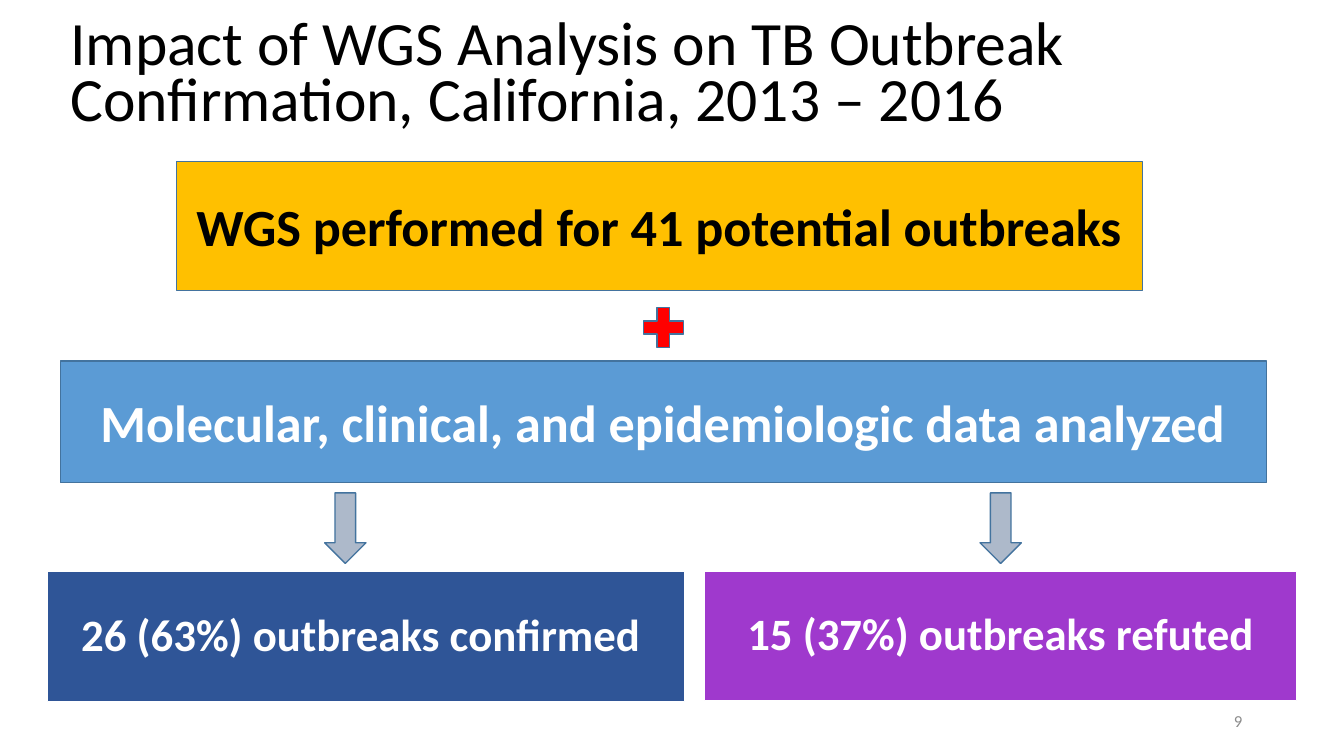
from dataclasses import dataclass

from pptx import Presentation
from pptx.dml.color import RGBColor
from pptx.enum.shapes import MSO_SHAPE
from pptx.enum.text import MSO_ANCHOR, PP_ALIGN
from pptx.shapes.base import BaseShape
from pptx.slide import Slide
from pptx.util import Emu, Pt

FONT = "Calibri"
EDGE = "43739E"
WHITE = "FFFFFF"
BLACK = "000000"


def px(length: int) -> Emu:
    """One px is a hundredth of an inch."""
    return Emu(length * 9144)


def color(code: str) -> RGBColor:
    return RGBColor.from_string(code)


@dataclass(frozen=True)
class Area:
    left: int
    top: int
    width: int
    height: int

    def lengths(self) -> tuple[Emu, Emu, Emu, Emu]:
        return px(self.left), px(self.top), px(self.width), px(self.height)


@dataclass(frozen=True)
class Label:
    text: str
    size: float
    color: str
    bold: bool = False
    align: PP_ALIGN = PP_ALIGN.CENTER
    line_spacing: float | Pt = 1.0
    side_inset: int = 10


@dataclass(frozen=True)
class Block:
    area: Area
    fill: str
    edge: str = EDGE
    kind: MSO_SHAPE = MSO_SHAPE.RECTANGLE
    label: Label | None = None


def write_label(box: BaseShape, label: Label) -> None:
    frame = box.text_frame
    frame.word_wrap = True
    frame.vertical_anchor = MSO_ANCHOR.MIDDLE
    frame.margin_left = frame.margin_right = px(label.side_inset)
    para = frame.paragraphs[0]
    para.alignment = label.align
    para.line_spacing = label.line_spacing
    span = para.add_run()
    span.text = label.text
    span.font.name = FONT
    span.font.size = Pt(label.size)
    span.font.bold = label.bold
    span.font.color.rgb = color(label.color)


def draw_block(page: Slide, block: Block) -> None:
    box = page.shapes.add_shape(block.kind, *block.area.lengths())
    box.shadow.inherit = False
    box.fill.solid()
    box.fill.fore_color.rgb = color(block.fill)
    box.line.color.rgb = color(block.edge)
    box.line.width = Pt(1)
    if block.label:
        write_label(box, block.label)


def draw_text(page: Slide, area: Area, label: Label) -> None:
    write_label(page.shapes.add_textbox(*area.lengths()), label)


def outcome(area: Area, fill: str, text: str) -> Block:
    label = Label(text, 32, WHITE, bold=True, line_spacing=0.9, side_inset=1)
    return Block(area, fill, edge=WHITE, label=label)


def arrow(left: int) -> Block:
    return Block(Area(left, 489, 41, 70), "ADB9CA", kind=MSO_SHAPE.DOWN_ARROW)


BLOCKS = [
    # Inputs: sequencing plus other data
    Block(Area(175, 160, 958, 128), "FFC000",
          label=Label("WGS performed for 41 potential outbreaks", 37.3, BLACK, bold=True)),
    Block(Area(631, 298, 54, 54), "FF0000", kind=MSO_SHAPE.MATH_PLUS),
    Block(Area(60, 358, 1196, 121), "5B9BD5",
          label=Label("Molecular, clinical, and epidemiologic data analyzed", 37.3, WHITE, bold=True)),
    # Arrows to the two outcomes
    arrow(322),
    arrow(972),
    # Outcomes
    outcome(Area(47, 567, 632, 129), "2F5597", "26 (63%) outbreaks confirmed "),
    outcome(Area(699, 567, 587, 128), "9F39CD", "15 (37%) outbreaks refuted"),
]


def main() -> None:
    deck = Presentation()
    deck.slide_width, deck.slide_height = px(1333), px(750)
    page = deck.slides.add_slide(deck.slide_layouts[6])

    # Title
    draw_text(page, Area(60, 18, 1226, 119),
              Label("Impact of WGS Analysis on TB Outbreak Confirmation, California, 2013 – 2016",
                    44, BLACK, align=PP_ALIGN.LEFT, line_spacing=Pt(40)))

    # Flow
    for block in BLOCKS:
        draw_block(page, block)

    # Page number
    draw_text(page, Area(942, 695, 300, 40), Label("9", 12, "8C8C8C", align=PP_ALIGN.RIGHT))

    deck.save("out.pptx")


if __name__ == "__main__":
    main()
